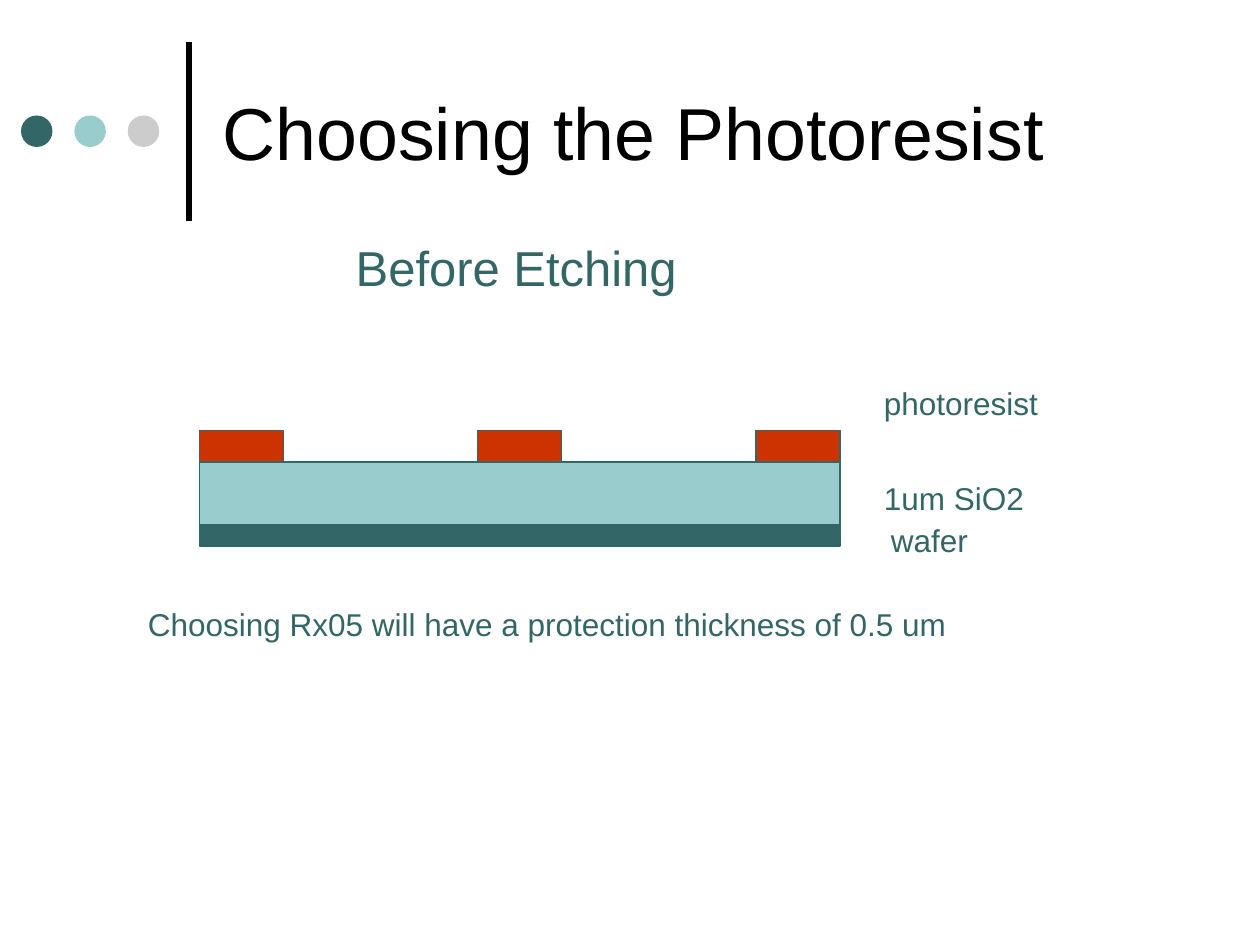
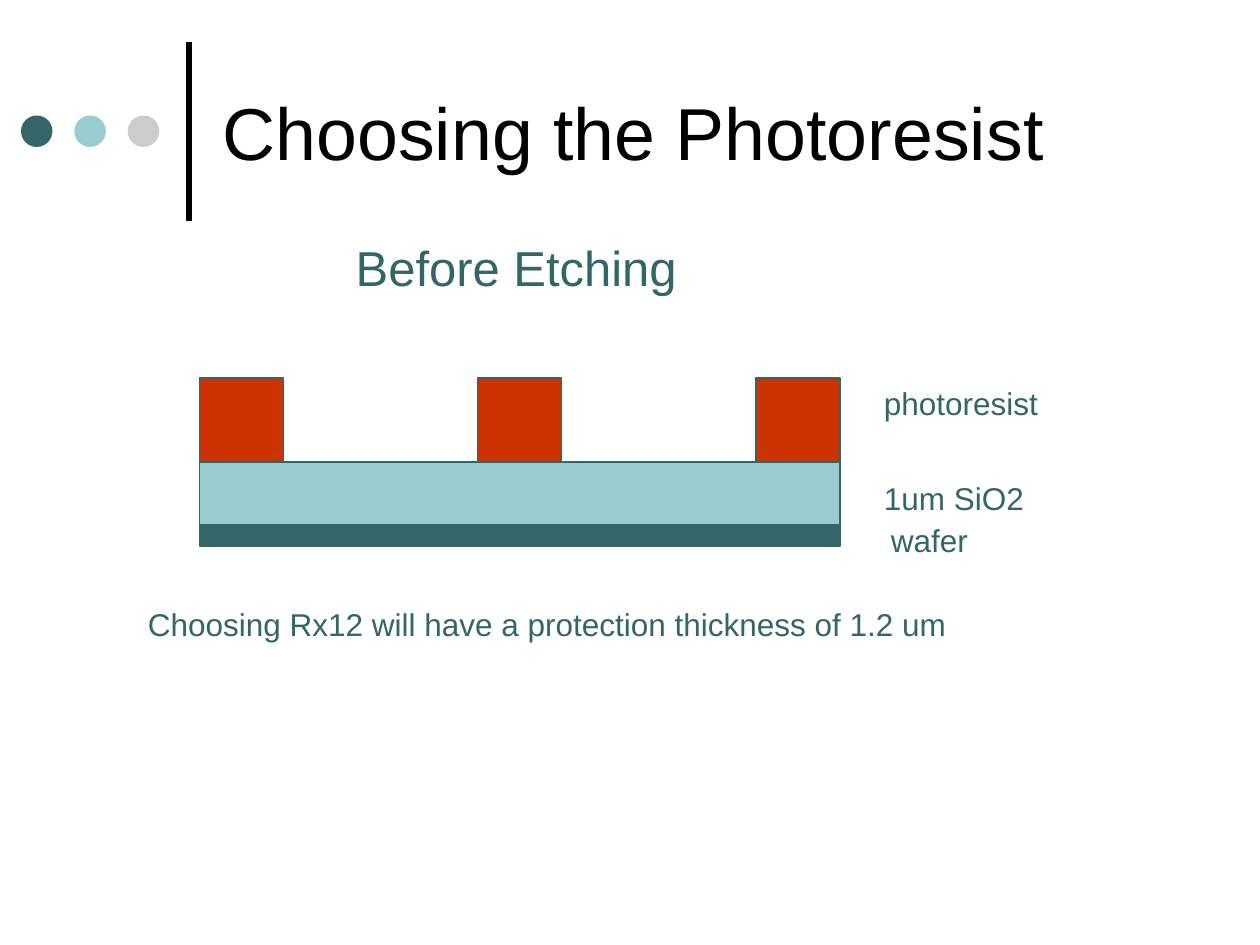
import pptx
import pptx.dml.color
import pptx.enum.shapes
import pptx.enum.text
import pptx.oxml.ns
import pptx.util
from lxml import etree

Pt = pptx.util.Pt
SHAPES = pptx.enum.shapes.MSO_SHAPE
ALIGN = pptx.enum.text.PP_ALIGN
AUTO_SIZE = pptx.enum.text.MSO_AUTO_SIZE

FONT = "Arial"
BLACK, TEAL, AQUA, GRAY, RED = "000000", "336666", "99CCCC", "CCCCCC", "CC3300"

WAFER_LEFT, WAFER_WIDTH = 114, 366
OXIDE_TOP, OXIDE_HEIGHT, WAFER_HEIGHT = 264, 36, 12
RESIST_WIDTH, RESIST_COUNT = 48, 3
RESIST_PITCH = (WAFER_WIDTH - RESIST_WIDTH) / (RESIST_COUNT - 1)
LABELS = [("1um SiO2", 498, 270, 102), ("wafer", 502, 294, 90), ("photoresist", 498, 216, 120)]


def rgb(color):
    return pptx.dml.color.RGBColor.from_string(color)


def format_paragraph(paragraph, size, color, alignment=ALIGN.LEFT):
    paragraph.alignment = alignment
    paragraph.font.name = FONT
    paragraph.font.size = Pt(size)
    paragraph.font.color.rgb = rgb(color)


def set_space_before(paragraph, percent):
    """Set the space before as a share of the line height."""
    properties = paragraph._p.get_or_add_pPr()
    space = etree.Element(pptx.oxml.ns.qn("a:spcBef"))
    etree.SubElement(space, pptx.oxml.ns.qn("a:spcPct"), val=str(percent * 1000))
    properties.insert(0, space)


def add_filled_shape(shapes, kind, left, top, width, height, fill, line=None):
    shape = shapes.add_shape(kind, Pt(left), Pt(top), Pt(width), Pt(height))
    shape.shadow.inherit = False
    shape.fill.solid()
    shape.fill.fore_color.rgb = rgb(fill)
    if line:
        shape.line.color.rgb = rgb(line)
        shape.line.width = Pt(0.75)
    else:
        shape.line.fill.background()


def add_text(shapes, text, left, top, width, height=29, size=18, alignment=ALIGN.LEFT):
    box = shapes.add_textbox(Pt(left), Pt(top), Pt(width), Pt(height))
    frame = box.text_frame
    frame.word_wrap = True
    frame.auto_size = AUTO_SIZE.SHAPE_TO_FIT_TEXT
    paragraph = frame.paragraphs[0]
    paragraph.text = text
    format_paragraph(paragraph, size, TEAL, alignment)
    set_space_before(paragraph, 50)


def add_title_band(slide):
    """Add the vertical rule and the three dots beside the title."""
    rule = slide.shapes.add_connector(
        pptx.enum.shapes.MSO_CONNECTOR.STRAIGHT, Pt(108), Pt(126), Pt(108), Pt(24))
    rule.line.color.rgb = rgb(BLACK)
    rule.line.width = Pt(3)
    etree.SubElement(rule._element.spPr, pptx.oxml.ns.qn("a:effectLst"))
    for index, color in enumerate([TEAL, AQUA, GRAY]):
        add_filled_shape(slide.shapes, SHAPES.OVAL, 12 + 30.5 * index, 66, 18, 18, color)


def set_title(slide, text):
    title = slide.shapes.title
    title.left, title.top, title.width, title.height = Pt(120), Pt(15), Pt(552), Pt(120)
    frame = title.text_frame
    frame.text = text
    frame.auto_size = AUTO_SIZE.NONE
    frame.vertical_anchor = pptx.enum.text.MSO_ANCHOR.MIDDLE
    format_paragraph(frame.paragraphs[0], 42, BLACK)


def add_wafer_diagram(slide, resist_height):
    """Add the layer stack with its resist blocks and labels as one group."""
    shapes = slide.shapes.add_group_shape().shapes
    layers = [(OXIDE_TOP, OXIDE_HEIGHT, AQUA), (OXIDE_TOP + OXIDE_HEIGHT, WAFER_HEIGHT, TEAL)]
    for top, height, color in layers:
        add_filled_shape(shapes, SHAPES.RECTANGLE, WAFER_LEFT, top, WAFER_WIDTH, height,
                         color, TEAL)
    for index in range(RESIST_COUNT):
        add_filled_shape(shapes, SHAPES.RECTANGLE, WAFER_LEFT + RESIST_PITCH * index,
                         OXIDE_TOP - resist_height, RESIST_WIDTH, resist_height, RED, TEAL)
    for text, left, top, width in LABELS:
        add_text(shapes, text, left, top, width)


def add_resist_slide(presentation, resist, thickness, resist_height, caption_width):
    slide = presentation.slides.add_slide(presentation.slide_layouts.get_by_name("Title Only"))
    add_title_band(slide)
    set_title(slide, "Choosing the Photoresist")
    add_wafer_diagram(slide, resist_height)
    add_text(slide.shapes,
             f"Choosing {resist} will have a protection thickness of {thickness} um",
             77.5, 342, caption_width)
    add_text(slide.shapes, "Before Etching", 195, 132, 200, 41, 28, ALIGN.CENTER)


def main():
    presentation = pptx.Presentation()
    presentation.slide_width, presentation.slide_height = Pt(720), Pt(540)
    add_resist_slide(presentation, "Rx05", "0.5", 18, 474)
    add_resist_slide(presentation, "Rx12", "1.2", 48, 504)
    presentation.save("out.pptx")


if __name__ == "__main__":
    main()
